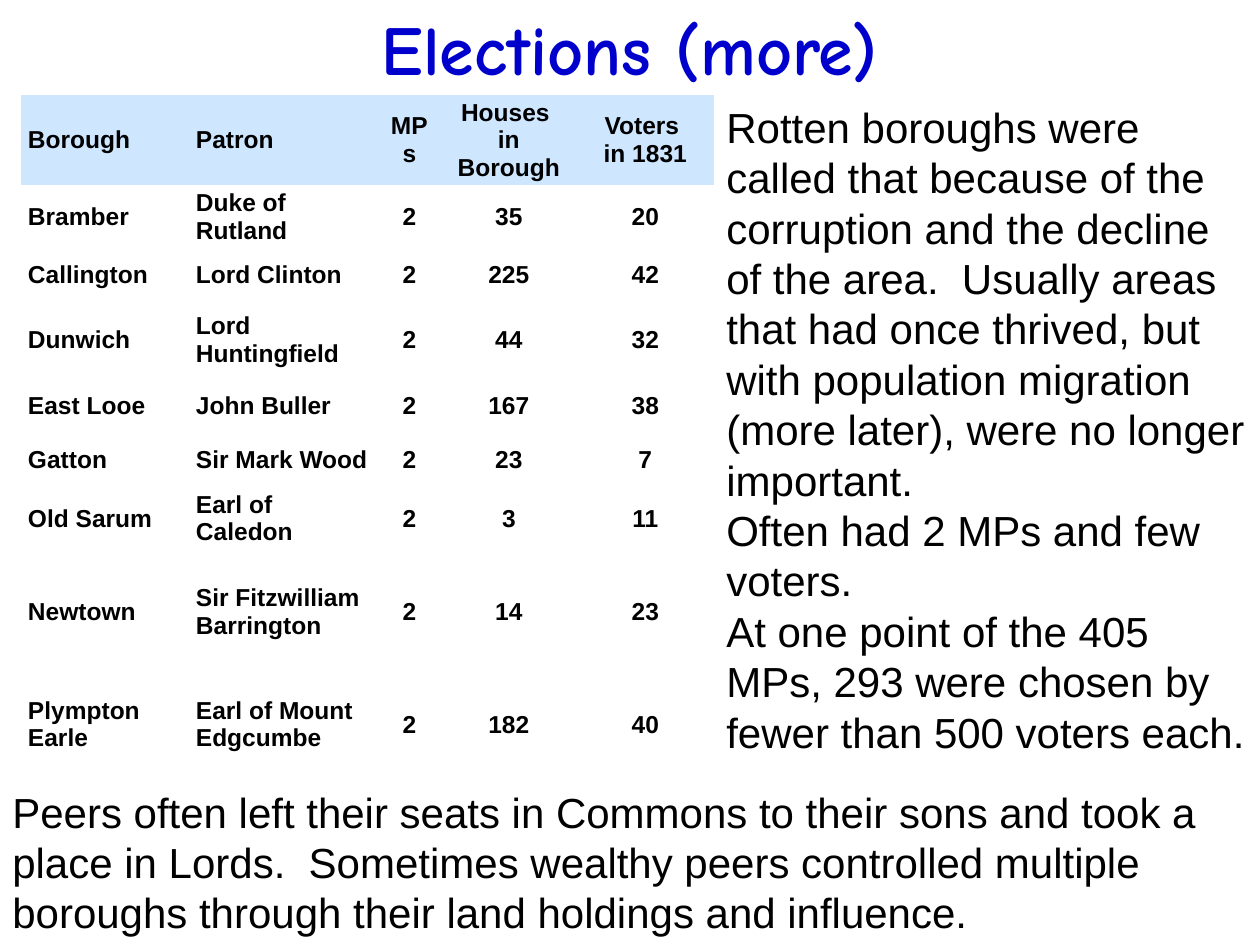
from pptx import Presentation
from pptx.dml.color import RGBColor
from pptx.enum.text import MSO_ANCHOR, PP_ALIGN
from pptx.util import Pt

PX = 914400 // 126
LEFT, CENTER = PP_ALIGN.LEFT, PP_ALIGN.CENTER
MIDDLE = MSO_ANCHOR.MIDDLE
BLACK = RGBColor(0x00, 0x00, 0x00)
TITLE_BLUE = RGBColor(0x00, 0x00, 0xCC)
HEADER_BLUE = RGBColor(0xCE, 0xE7, 0xFF)
NO_GRID_STYLE = "{2D5ABB26-0587-4C30-8999-92F81FD0307C}"

COLUMN_WIDTHS = [168, 189, 63, 136, 137]
ROW_HEIGHTS = [89, 63, 53, 78, 54, 54, 63, 124, 101]
BOROUGHS = [
    ("Borough", "Patron", "MPs", "Houses \vin Borough", "Voters \vin 1831"),
    ("Bramber", "Duke of Rutland", "2", "35", "20"),
    ("Callington", "Lord Clinton", "2", "225", "42"),
    ("Dunwich", "Lord Huntingfield", "2", "44", "32"),
    ("East Looe", "John Buller", "2", "167", "38"),
    ("Gatton", "Sir Mark Wood", "2", "23", "7"),
    ("Old Sarum", "Earl of Caledon", "2", "3", "11"),
    ("Newtown", "Sir Fitzwilliam Barrington", "2", "14", "23"),
    ("Plympton Earle", "Earl of Mount Edgcumbe", "2", "182", "40"),
]
ROTTEN_BOROUGHS = [
    "Rotten boroughs were called that because of the corruption and the decline "
    "of the area.  Usually areas that had once thrived, but with population "
    "migration (more later), were no longer important.",
    "Often had 2 MPs and few voters.",
    "At one point of the 405 MPs, 293 were chosen by fewer than 500 voters each.",
]
PEERS = [
    "Peers often left their seats in Commons to their sons and took a place in "
    "Lords.  Sometimes wealthy peers controlled multiple boroughs through their "
    "land holdings and influence.",
]


def write(frame, text, size=24, font="Arial", color=BLACK, bold=False, align=LEFT):
    frame.word_wrap = True
    frame.text = text
    for para in frame.paragraphs:
        para.alignment = align
        for span in para.runs:
            span.font.size = Pt(size)
            span.font.name = font
            span.font.bold = bold
            span.font.color.rgb = color


deck = Presentation()
deck.slide_width = 1260 * PX
deck.slide_height = 945 * PX
page = deck.slides.add_slide(deck.slide_layouts[6])

title = page.shapes.add_textbox(63 * PX, 0, 1134 * PX, 95 * PX)
title.text_frame.vertical_anchor = MIDDLE
write(title.text_frame, "Elections (more)", size=40, font="Comic Neue",
      color=TITLE_BLUE, bold=True, align=CENTER)

table = page.shapes.add_table(
    len(BOROUGHS), len(COLUMN_WIDTHS), 21 * PX, 95 * PX,
    sum(COLUMN_WIDTHS) * PX, sum(ROW_HEIGHTS) * PX).table
table._tbl.tblPr[0].text = NO_GRID_STYLE
table.first_row = False
table.horz_banding = False
for column, width in zip(table.columns, COLUMN_WIDTHS):
    column.width = width * PX
for row, height in zip(table.rows, ROW_HEIGHTS):
    row.height = height * PX

for row_index, borough in enumerate(BOROUGHS):
    for column_index, text in enumerate(borough):
        cell = table.cell(row_index, column_index)
        cell.margin_left = cell.margin_right = 7 * PX
        cell.margin_top = cell.margin_bottom = 1 * PX
        cell.vertical_anchor = MIDDLE
        if row_index == 0:
            cell.fill.solid()
            cell.fill.fore_color.rgb = HEADER_BLUE
        else:
            cell.fill.background()
        write(cell.text_frame, text, size=14, bold=True,
              align=LEFT if column_index < 2 else CENTER)

for paragraphs, left, top, width, height in [
    (ROTTEN_BOROUGHS, 714, 95, 546, 674),
    (PEERS, 0, 780, 1260, 165),
]:
    box = page.shapes.add_textbox(left * PX, top * PX, width * PX, height * PX)
    write(box.text_frame, "\n".join(paragraphs))

deck.save("out.pptx")
